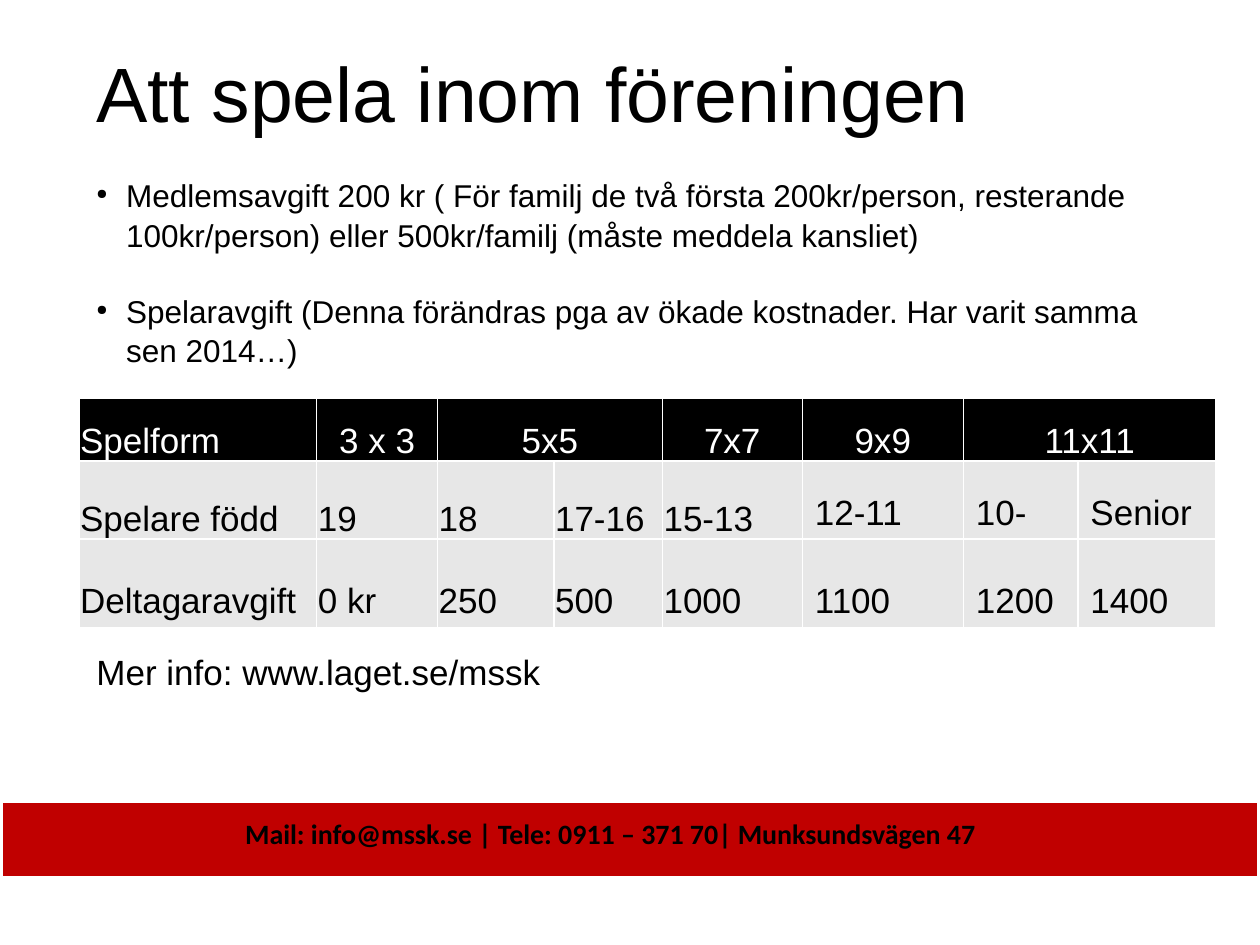
import pptx
import pptx.dml.color
import pptx.enum.shapes
import pptx.enum.text
import pptx.oxml
import pptx.oxml.ns
import pptx.util

Pt = pptx.util.Pt
RGB = pptx.dml.color.RGBColor
BLACK = RGB(0, 0, 0)
WHITE = RGB(255, 255, 255)
RED = RGB(0xC0, 0, 0)
GREY = RGB(0xE7, 0xE7, 0xE7)

BULLETS = [
    "Medlemsavgift 200 kr ( För familj de två första 200kr/person, resterande "
    "100kr/person) eller 500kr/familj (måste meddela kansliet)",
    "Spelaravgift (Denna förändras pga av ökade kostnader. Har varit samma sen 2014…)",
]
ROWS = [
    ["Spelform", "3 x 3", "5x5", "", "7x7", "9x9", "11x11", ""],
    ["Spelare född", "19", "18", "17-16", "15-13", "12-11", "10-", "Senior"],
    ["Deltagaravgift", "0 kr", "250", "500", "1000", "1100", "1200", "1400"],
]
COL_WIDTHS = [136, 69, 66.5, 62, 80, 92, 65.5, 79]
ROW_HEIGHTS = [36, 44.5, 50.5]
MERGED_COLUMNS = [2, 6]
BOTTOM_MARGINS = [0, 0, 3.6]
FIRST_WIDE_COLUMN = 5


def set_attrs(obj, values):
    for name, value in values.items():
        setattr(obj, name, value)


def add_xml(parent, xml):
    ns = pptx.oxml.ns.nsdecls("a")
    tag, rest = xml.split(" ", 1)
    parent.append(pptx.oxml.parse_xml(f"{tag} {ns} {rest}"))


def style_font(p, size, color=BLACK, name="Arial", bold=False):
    set_attrs(p.font, {"size": Pt(size), "name": name, "bold": bold})
    p.font.color.rgb = color


def add_text(slide, box, lines, size, name="Arial", bold=False, margin_top=3.6):
    tf = slide.shapes.add_textbox(*map(Pt, box)).text_frame
    set_attrs(tf, {"word_wrap": True, "margin_top": Pt(margin_top)})
    tf.text = "\n".join(lines)
    for p in tf.paragraphs:
        style_font(p, size, name=name, bold=bold)
    return tf


def add_bullets(slide, box, lines, size):
    tf = add_text(slide, box, lines, size)
    for i, p in enumerate(tf.paragraphs):
        set_attrs(p, {"line_spacing": 1.04, "space_before": Pt(7 if i else 0),
                      "space_after": Pt(14.2)})
        pPr = p._p.get_or_add_pPr()
        pPr.set("marL", str(Pt(17)))
        pPr.set("indent", str(-Pt(17)))
        bullet = [e for e in pPr if e.tag.endswith("defRPr")]
        add_xml(pPr, '<a:buSzPct val="45000"/>')
        add_xml(pPr, '<a:buChar char="●"/>')
        pPr.extend(bullet)


def add_bar(slide, box):
    kind = pptx.enum.shapes.MSO_SHAPE.RECTANGLE
    sp = slide.shapes.add_shape(kind, *map(Pt, box))
    sp.shadow.inherit = False
    sp.fill.solid()
    sp.fill.fore_color.rgb = RED
    sp.line.color.rgb = WHITE
    sp.line.width = Pt(3.75)


def style_cell(cell, row, col):
    header = row == 0
    wide = not header and col >= FIRST_WIDE_COLUMN
    side = 7.2 if wide else 0.72
    set_attrs(cell, {
        "vertical_anchor": pptx.enum.text.MSO_ANCHOR.BOTTOM,
        "margin_left": Pt(side),
        "margin_right": Pt(side),
        "margin_top": Pt(3.6 if wide else 0.72),
        "margin_bottom": Pt(3.6 if wide else BOTTOM_MARGINS[row]),
    })
    p = cell.text_frame.paragraphs[0]
    style_font(p, 20, WHITE if header else BLACK)
    if header and col:
        p.alignment = pptx.enum.text.PP_ALIGN.CENTER
    tcPr = cell._tc.get_or_add_tcPr()
    for edge in ("lnL", "lnR", "lnT", "lnB"):
        add_xml(tcPr, f'<a:{edge} w="{Pt(1)}"><a:solidFill><a:srgbClr val="{WHITE}"/>'
                      f"</a:solidFill></a:{edge}>")
    cell.fill.solid()
    cell.fill.fore_color.rgb = BLACK if header else GREY


def add_fee_table(slide, left, top):
    size = (sum(COL_WIDTHS), sum(ROW_HEIGHTS))
    table = slide.shapes.add_table(len(ROWS), len(COL_WIDTHS),
                                   *map(Pt, (left, top, *size))).table
    for column, width in zip(table.columns, COL_WIDTHS):
        column.width = Pt(width)
    for r, texts in enumerate(ROWS):
        table.rows[r].height = Pt(ROW_HEIGHTS[r])
        for c, text in enumerate(texts):
            cell = table.cell(r, c)
            cell.text = text
            style_cell(cell, r, c)
    for c in MERGED_COLUMNS:
        table.cell(0, c).merge(table.cell(0, c + 1))


def main():
    prs = pptx.Presentation()
    set_attrs(prs, {"slide_width": Pt(720), "slide_height": Pt(540)})
    s = prs.slides.add_slide(prs.slide_layouts[6])
    add_bar(s, (0, 457, 720, 45.5))
    add_text(s, (133, 463, 510, 28), ["Mail: info@mssk.se | Tele: 0911 – 371 70| Munksundsvägen 47"],
             16, "Calibri", True)
    add_text(s, (48, 18, 642, 78), ["Att spela inom föreningen"], 44, margin_top=8)
    add_bullets(s, (48, 96.5, 642, 125), BULLETS, 18)
    add_text(s, (48, 368, 642, 40), ["Mer info: www.laget.se/mssk"], 20)
    add_fee_table(s, 45, 227.5)
    prs.save("out.pptx")


if __name__ == "__main__":
    main()
